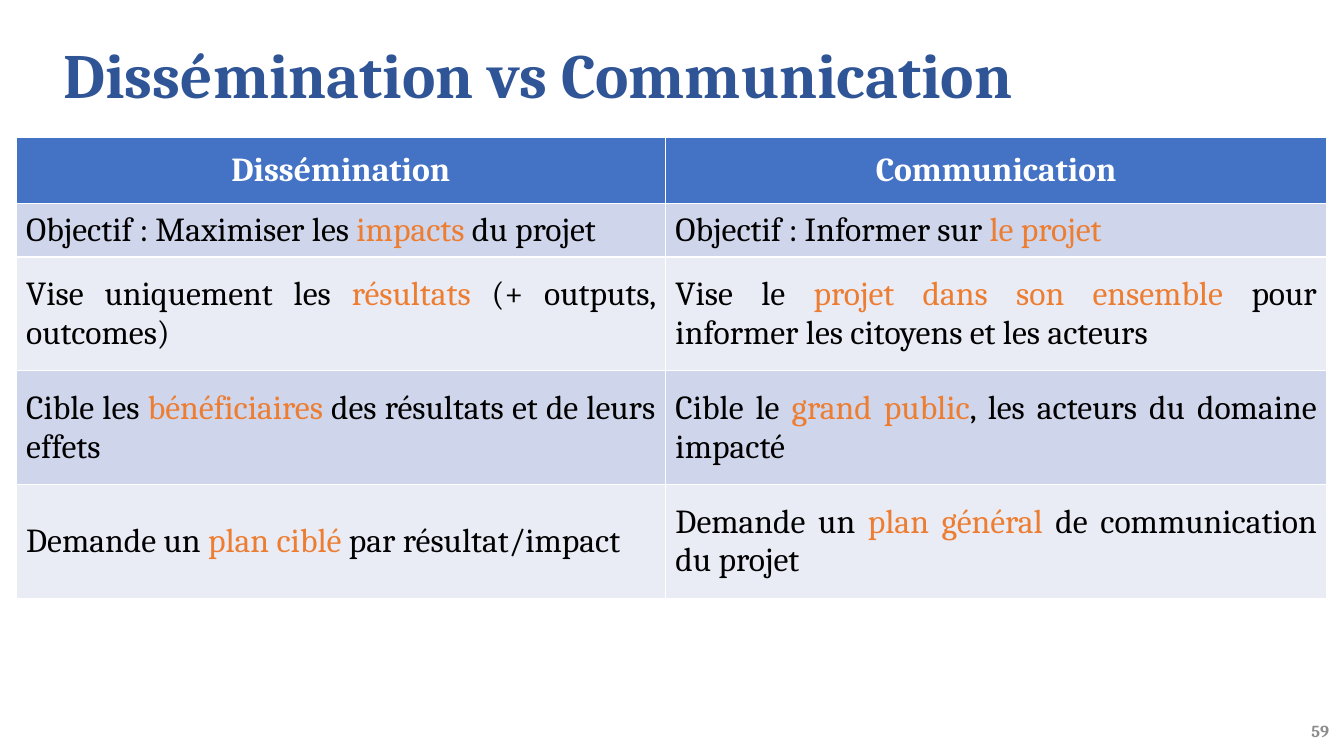
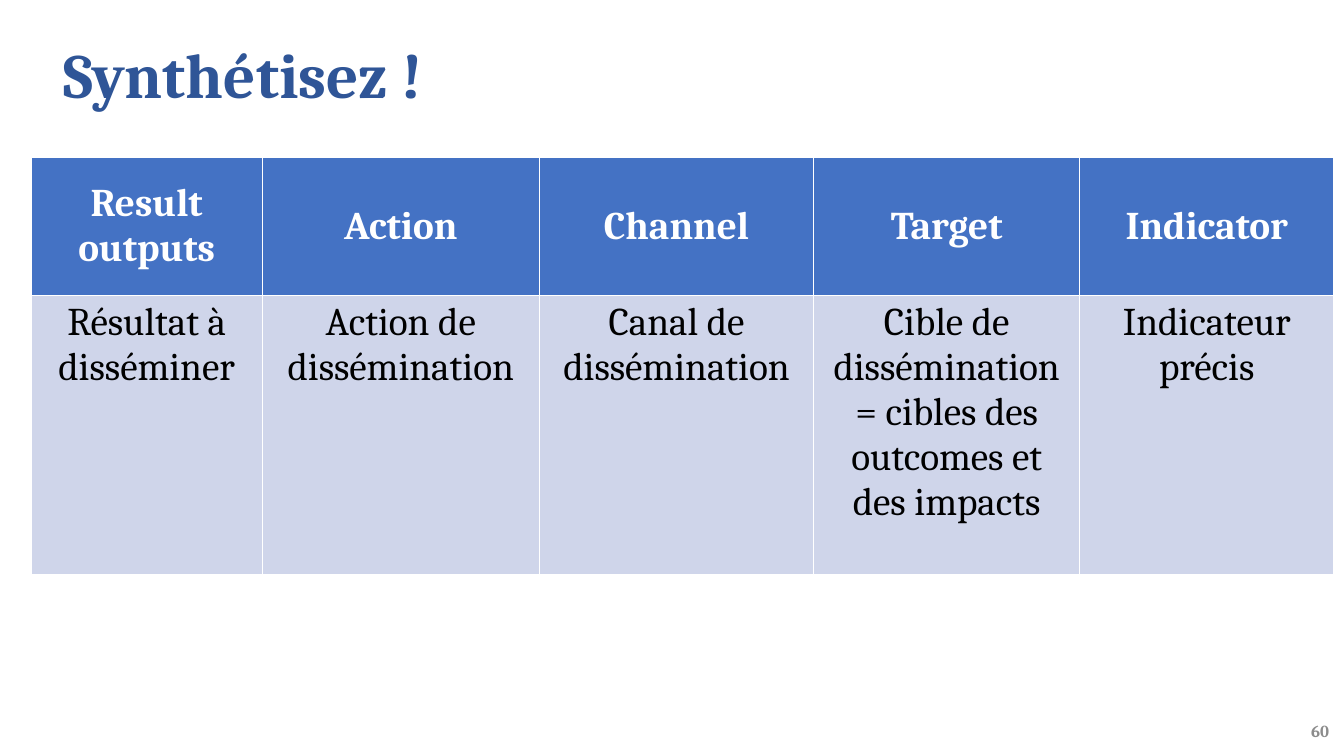
"""Build two slides comparing dissemination and communication."""
from pptx import Presentation
from pptx.dml.color import RGBColor
from pptx.enum.text import MSO_ANCHOR as Anchor, MSO_AUTO_SIZE as AutoSize, PP_ALIGN as Align
from pptx.util import Inches, Pt

COLORS = {"title": "2F5597", "number": "8C8C8C", "header": "4472C4", "white": "FFFFFF",
          "text": "000000", "accent": "ED7D31", "odd": "CFD5EA", "even": "E9EBF5"}
FONT = "Cambria"
TITLE_BOX = (0.53, 0.4, 12.26, 0.75)
NUMBER_BOX = (10.28, 7.05, 3, 0.4)

# Text between bars is highlighted.
SLIDES = [
    {"title": "Dissémination vs Communication", "number": 59,
     "corner": (0.16, 1.36), "columns": [6.44, 6.56],
     "heights": [0.66, 0.53, 1.13, 1.13, 1.13],
     "size": 24, "align": Align.JUSTIFY, "anchor": Anchor.MIDDLE,
     "rows": [
         ("Dissémination", "Communication"),
         ("Objectif : Maximiser les |impacts |du projet ",
          "Objectif : Informer sur |le projet"),
         ("Vise uniquement les |résultats| (+ outputs, outcomes)",
          "Vise le |projet dans son ensemble |pour informer les citoyens et les acteurs"),
         ("Cible les |bénéficiaires| des résultats et de leurs effets",
          "Cible le |grand public|, les acteurs du domaine impacté"),
         ("Demande un |plan ciblé |par résultat/impact",
          "Demande un |plan général |de communication du projet"),
     ]},
    {"title": "Synthétisez !", "number": 60,
     "corner": (0.31, 1.56), "columns": [2.29, 2.75, 2.72, 2.64, 2.52],
     "heights": [1.37, 2.77],
     "size": 28, "align": Align.CENTER, "anchor": Anchor.TOP,
     "rows": [
         ("Result outputs", "Action", "Channel", "Target", "Indicator"),
         ("Résultat à disséminer", "Action de dissémination", "Canal de dissémination",
          "Cible de dissémination = cibles des outcomes et des impacts",
          "Indicateur précis"),
     ]},
]


def write(frame, text, size, color, bold, align):
    paragraph = frame.paragraphs[0]
    paragraph.alignment = align
    for index, part in enumerate(text.split("|")):
        run = paragraph.add_run()
        run.text = part
        for name, value in {"name": FONT, "size": Pt(size), "bold": bold}.items():
            setattr(run.font, name, value)
        run.font.color.rgb = RGBColor.from_string(COLORS["accent" if index % 2 else color])
    return paragraph


def add_title(slide, text):
    title = slide.shapes.title
    for name, value in zip(("left", "top", "width", "height"), TITLE_BOX):
        setattr(title, name, Inches(value))
    frame = title.text_frame
    frame.auto_size = AutoSize.NONE
    frame.vertical_anchor = Anchor.MIDDLE
    write(frame, text, 45, "title", True, Align.LEFT).line_spacing = 0.9


def add_number(slide, number):
    frame = slide.shapes.add_textbox(*map(Inches, NUMBER_BOX)).text_frame
    frame.word_wrap = True
    frame.vertical_anchor = Anchor.MIDDLE
    write(frame, str(number), 12, "number", True, Align.RIGHT)


def add_grid(slide, content):
    rows, columns, heights = content["rows"], content["columns"], content["heights"]
    extent = (*content["corner"], sum(columns), sum(heights))
    grid = slide.shapes.add_table(len(rows), len(columns), *map(Inches, extent)).table
    for column, width in zip(grid.columns, columns):
        column.width = Inches(width)
    for row_index, (row, height, texts) in enumerate(zip(grid.rows, heights, rows)):
        row.height = Inches(height)
        header = row_index == 0
        fill = "header" if header else "odd" if row_index % 2 else "even"
        for cell, text in zip(row.cells, texts):
            cell.fill.solid()
            cell.fill.fore_color.rgb = RGBColor.from_string(COLORS[fill])
            cell.vertical_anchor = Anchor.MIDDLE if header else content["anchor"]
            write(cell.text_frame, text, content["size"], "white" if header else "text",
                  header, Align.CENTER if header else content["align"])


def main():
    deck = Presentation()
    deck.slide_width, deck.slide_height = Inches(13.33), Inches(7.5)
    for content in SLIDES:
        slide = deck.slides.add_slide(deck.slide_layouts[5])
        add_title(slide, content["title"])
        add_number(slide, content["number"])
        add_grid(slide, content)
    deck.save("out.pptx")


if __name__ == "__main__":
    main()
